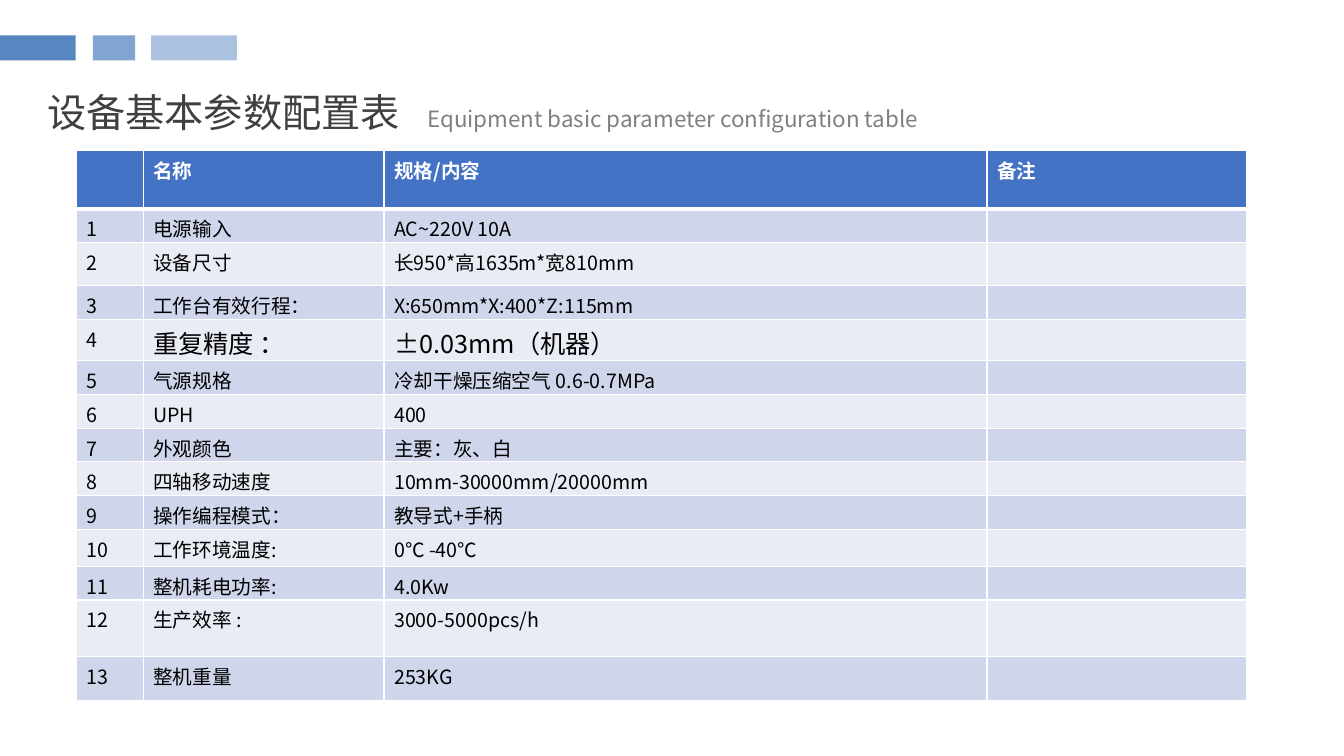
from lxml import etree
from pptx import Presentation
from pptx.dml.color import RGBColor
from pptx.enum import shapes, text
from pptx.oxml import ns
from pptx.util import Inches, Pt

FONT = "Noto Sans CJK SC"
ACCENT = RGBColor(0x57, 0x86, 0xC1)
TITLE = RGBColor(0x40, 0x40, 0x40)
SUBTITLE = RGBColor(0x80, 0x80, 0x80)
HEADER = RGBColor(0x44, 0x72, 0xC4)
ODD_BAND = RGBColor(0xCF, 0xD5, 0xEA)
EVEN_BAND = RGBColor(0xE9, 0xEB, 0xF5)
WHITE = RGBColor(0xFF, 0xFF, 0xFF)
BLACK = RGBColor(0x00, 0x00, 0x00)

COLUMN_WIDTHS = [0.66, 2.39, 5.98, 2.57]
HEADINGS = ["", "名称", "规格/内容", "备注"]
PARAMETERS = [
    ("电源输入", "AC~220V 10A", 0.33, 14),
    ("设备尺寸", "长950*高1635m*宽810mm", 0.43, 14),
    ("工作台有效行程：", "X:650mm*X:400*Z:115mm", 0.33, 14),
    ("重复精度 ：", "±0.03mm（机器）", 0.33, 18),
    ("气源规格", "冷却干燥压缩空气 0.6-0.7MPa", 0.33, 14),
    ("UPH", "400", 0.33, 14),
    ("外观颜色", "主要：灰、白", 0.33, 14),
    ("四轴移动速度", "10mm-30000mm/20000mm", 0.33, 14),
    ("操作编程模式：", "教导式+手柄", 0.33, 14),
    ("工作环境温度:", "0℃ -40℃", 0.37, 14),
    ("整机耗电功率:", "4.0Kw", 0.33, 14),
    ("生产效率 :", "3000-5000pcs/h", 0.56, 14),
    ("整机重量", "253KG", 0.44, 14),
]


def add_child(parent, tag, **attributes):
    """Append a DrawingML element to its parent."""
    return etree.SubElement(parent, ns.qn(tag), **attributes)


def style_paragraph(paragraph, size, color, bold=False):
    """Give a paragraph its font, including the East Asian face."""
    font = paragraph.font
    font.size = Pt(size)
    font.bold = bold
    font.color.rgb = color
    font.name = FONT
    defaults = paragraph._p.pPr.find(ns.qn("a:defRPr"))
    add_child(defaults, "a:ea", typeface=FONT)


def add_accent_bars(slide, left, top, height):
    """Draw the row of fading bars from a left edge."""
    for offset, width, opacity in [(0, 0.75, 100), (0.92, 0.42, 75), (1.5, 0.85, 50)]:
        bar = slide.shapes.add_shape(
            shapes.MSO_SHAPE.RECTANGLE,
            Inches(left + offset), Inches(top), Inches(width), Inches(height))
        bar.shadow.inherit = False
        bar.line.fill.background()
        bar.fill.solid()
        bar.fill.fore_color.rgb = ACCENT
        if opacity < 100:
            color = bar._element.spPr.find(".//" + ns.qn("a:srgbClr"))
            add_child(color, "a:alpha", val=str(opacity * 1000))


def place_heading(box, wording, left, top, width, height, size, color, wrap):
    """Position one heading box and fill in its line."""
    box.left, box.top = Inches(left), Inches(top)
    box.width, box.height = Inches(width), Inches(height)
    frame = box.text_frame
    frame.text = wording
    frame.word_wrap = wrap
    frame.auto_size = text.MSO_AUTO_SIZE.NONE
    frame.vertical_anchor = text.MSO_ANCHOR.MIDDLE
    line = frame.paragraphs[0]
    line.alignment = text.PP_ALIGN.LEFT
    style_paragraph(line, size, color)


def add_headings(slide, left, top):
    """Set the title and its translation side by side."""
    place_heading(slide.shapes.title, "设备基本参数配置表",
                  left, top, 3.74, 0.57, 28, TITLE, False)
    translation = slide.shapes.add_textbox(0, 0, 0, 0)
    place_heading(translation, "Equipment basic parameter configuration table",
                  left + 3.77, top + 0.17, 5.85, 0.37, 16, SUBTITLE, True)


def set_borders(cell, top_width, bottom_width):
    """Rule a cell in white with the given top and bottom widths."""
    properties = cell._tc.get_or_add_tcPr()
    for side, width in [("L", 1), ("R", 1), ("T", top_width), ("B", bottom_width)]:
        line = add_child(properties, "a:ln" + side, w=str(Pt(width)))
        fill = add_child(line, "a:solidFill")
        add_child(fill, "a:srgbClr", val=str(WHITE))


def fill_cell(cell, wording, row, size):
    """Fill one table cell according to its row."""
    is_header = row == 0
    set_borders(cell, 3 if row == 1 else 1, 3 if is_header else 1)
    cell.fill.solid()
    cell.fill.fore_color.rgb = HEADER if is_header else ODD_BAND if row % 2 else EVEN_BAND
    cell.margin_bottom = 0
    cell.text = wording
    paragraph = cell.text_frame.paragraphs[0]
    style_paragraph(paragraph, size, WHITE if is_header else BLACK, is_header)
    if not wording:
        add_child(paragraph._p, "a:endParaRPr", sz=str(size * 100))


def add_parameter_table(slide, left, top):
    """Build the parameter table from its top left corner."""
    heights = [0.58] + [height for _, _, height, _ in PARAMETERS]
    table = slide.shapes.add_table(
        len(heights), len(COLUMN_WIDTHS), Inches(left), Inches(top),
        Inches(sum(COLUMN_WIDTHS)), Inches(sum(heights))).table
    for column, width in zip(table.columns, COLUMN_WIDTHS):
        column.width = Inches(width)
    for row, height in zip(table.rows, heights):
        row.height = Inches(height)
    for column, heading in enumerate(HEADINGS):
        fill_cell(table.cell(0, column), heading, 0, 14)
    for number, (name, content, _, size) in enumerate(PARAMETERS, 1):
        entries = [(str(number), 14), (name, size), (content, size), ("", 14)]
        for column, (entry, entry_size) in enumerate(entries):
            fill_cell(table.cell(number, column), entry, number, entry_size)


def main():
    """Build and save the slide."""
    presentation = Presentation()
    presentation.slide_width = Inches(13.33)
    presentation.slide_height = Inches(7.5)
    slide = presentation.slides.add_slide(presentation.slide_layouts[5])
    add_accent_bars(slide, 0, 0.35, 0.25)
    add_headings(slide, 0.37, 0.82)
    add_parameter_table(slide, 0.76, 1.49)
    presentation.save("out.pptx")


if __name__ == "__main__":
    main()
